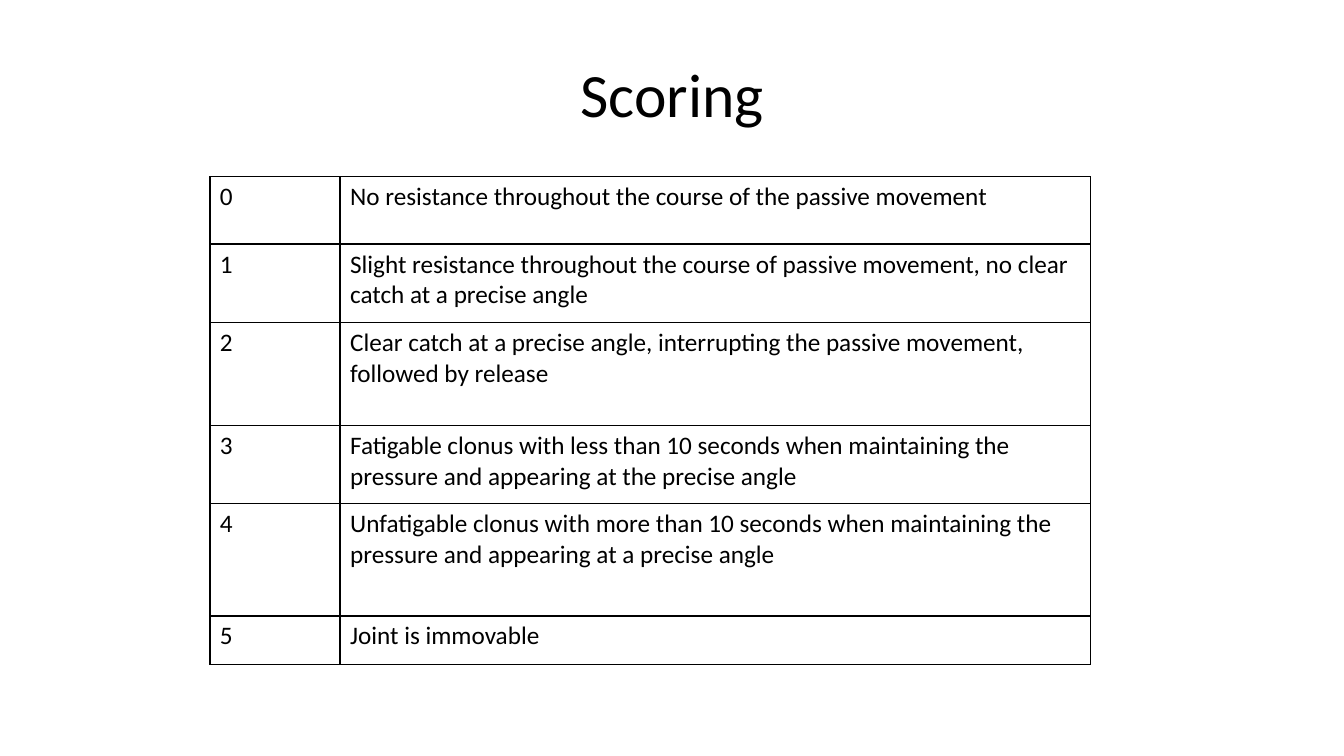
"""Build the Scoring slide: a title above a six-grade table."""
from lxml import etree
from pptx import Presentation, util as u
from pptx.dml.color import RGBColor
from pptx.enum import text
from pptx.oxml import ns

TITLE = "Scoring"
GRADES = [
    ("No resistance throughout the course of the passive movement", 1.7),
    ("Slight resistance throughout the course of passive movement, no clear catch at a precise angle", 1.97),
    ("Clear catch at a precise angle, interrupting the passive movement, followed by release", 2.6),
    ("Fatigable clonus with less than 10 seconds when maintaining the pressure and appearing at the precise angle", 1.97),
    ("Unfatigable clonus with more than 10 seconds when maintaining the pressure and appearing at a precise angle", 2.83),
    ("Joint is immovable", 1.22),
]
COLUMN_WIDTHS = (3.28, 18.92)
COLORS = {"ink": "000000"}
TITLE_FONT = {"name": "Calibri", "size": u.Pt(44)}
CELL_FONT = {"name": "Calibri", "size": u.Pt(18)}


def style(paragraph, font_format):
    for name, value in font_format.items():
        setattr(paragraph.font, name, value)
    paragraph.font.color.rgb = RGBColor.from_string(COLORS["ink"])


def add_borders(cell):
    properties = cell._tc.get_or_add_tcPr()
    for position, side in enumerate(("lnL", "lnR", "lnT", "lnB")):
        line = etree.Element(ns.qn(f"a:{side}"), w=str(u.Pt(1)))
        fill = etree.SubElement(line, ns.qn("a:solidFill"))
        etree.SubElement(fill, ns.qn("a:srgbClr"), val=COLORS["ink"])
        properties.insert(position, line)


def add_title(slide):
    title = slide.shapes.title
    placement = {"left": 1.7, "top": 0.76, "width": 30.48, "height": 3.18}
    for name, value in placement.items():
        setattr(title, name, u.Cm(value))
    frame = title.text_frame
    frame.text = TITLE
    frame.vertical_anchor = text.MSO_ANCHOR.MIDDLE
    frame.paragraphs[0].alignment = text.PP_ALIGN.CENTER
    style(frame.paragraphs[0], TITLE_FONT)


def add_grades(slide):
    height = sum(row_height for _, row_height in GRADES)
    table = slide.shapes.add_table(
        len(GRADES), len(COLUMN_WIDTHS), u.Cm(5.29), u.Cm(4.45),
        u.Cm(sum(COLUMN_WIDTHS)), u.Cm(height)).table
    table.first_row = table.horz_banding = False
    for column, width in zip(table.columns, COLUMN_WIDTHS):
        column.width = u.Cm(width)
    for grade, (description, row_height) in enumerate(GRADES):
        row = table.rows[grade]
        row.height = u.Cm(row_height)
        for cell, content in zip(row.cells, (str(grade), description)):
            cell.text = content
            cell.fill.background()
            add_borders(cell)
            style(cell.text_frame.paragraphs[0], CELL_FONT)


def main():
    presentation = Presentation()
    presentation.slide_width = u.Cm(33.87)
    presentation.slide_height = u.Cm(19.05)
    slide = presentation.slides.add_slide(presentation.slide_layouts[5])
    add_title(slide)
    add_grades(slide)
    presentation.save("out.pptx")


if __name__ == "__main__":
    main()
